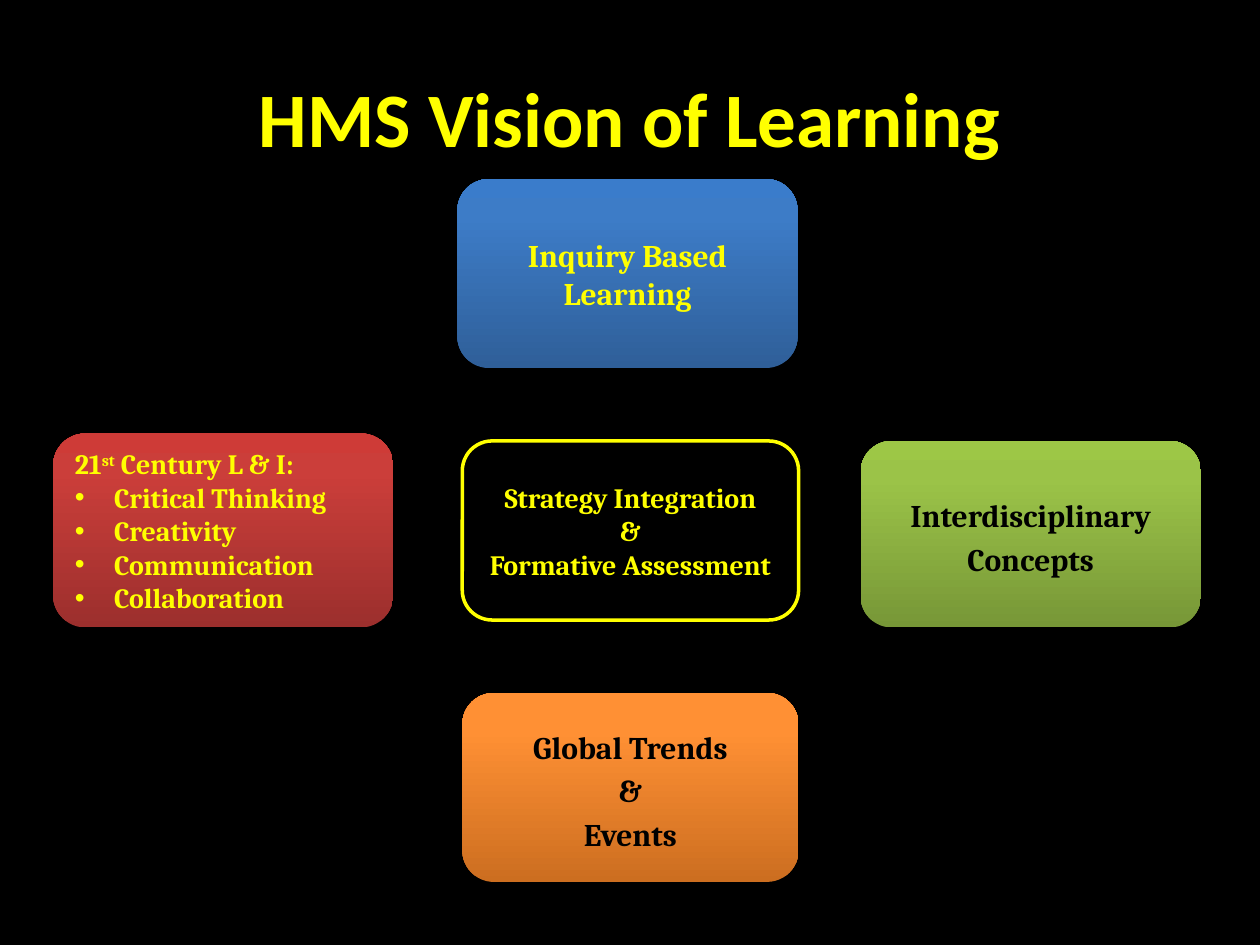
from copy import deepcopy

from lxml.etree import SubElement
from pptx import Presentation
from pptx.dml.color import RGBColor
from pptx.enum.shapes import MSO_SHAPE
from pptx.enum.text import MSO_ANCHOR, PP_ALIGN
from pptx.oxml.ns import qn
from pptx.util import Cm, Pt

# Content: a line is a list of (text, superscript) runs or a plain string
TITLE = "HMS Vision of Learning"
CARDS = [
    dict(at=(9.32, 8.89, 6.78, 3.61), fill="center", ink="yellow", size="small",
         lines=["Strategy Integration", "&", "Formative Assessment"]),
    dict(at=(9.22, 3.61, 6.86, 3.81), fill="blue", ink="yellow", size="large",
         lines=["Inquiry Based", "Learning"]),
    dict(at=(1.07, 8.74, 6.86, 3.91), fill="red", ink="yellow", size="small",
         align=PP_ALIGN.LEFT,
         lines=[[("21", False), ("st", True), (" Century L & I:", False)]],
         bullets=["Critical Thinking", "Creativity", "Communication", "Collaboration"]),
    dict(at=(17.35, 8.89, 6.86, 3.76), fill="green", ink="black", size="large",
         spacing=1.15, lines=["Interdisciplinary Concepts"]),
    dict(at=(9.32, 13.97, 6.78, 3.81), fill="orange", ink="black", size="large",
         spacing=1.15, lines=["Global Trends", "&", "Events"]),
]

THEME = dict(
    colors=dict(yellow="FFFF00", black="000000"),
    gradients=dict(blue=("2F5F99", "3D7CC7", "3A7CCB"),
                   red=("9C2F2D", "CB3E3A", "CE3B37"),
                   green=("779737", "9BC348", "9DC746"),
                   orange=("CC6E20", "FF9034", "FF9136")),
    stops=(0, 0.8, 1),
    sizes=dict(title=44, large=18, small=16),
    fonts=dict(title="Calibri", body="Cambria"),
)


def color(name):
    return RGBColor.from_string(THEME["colors"][name])


def style(paragraph, font_name, size, ink, align):
    paragraph.alignment = align
    font = paragraph.font
    font.name = THEME["fonts"][font_name]
    font.size = Pt(THEME["sizes"][size])
    font.bold = True
    font.color.rgb = color(ink)


def add_bullet(paragraph):
    properties = paragraph._p.get_or_add_pPr()
    properties.set("marL", str(Cm(0.79)))
    properties.set("indent", str(-Cm(0.79)))
    SubElement(properties, qn("a:buFont")).set("typeface", "Arial")
    SubElement(properties, qn("a:buChar")).set("char", "•")


def fill_gradient(shape, colors):
    shape.fill.gradient()
    shape.fill.gradient_angle = 90
    stop_list = shape.element.spPr.find(".//" + qn("a:gsLst"))
    stop_list.append(deepcopy(stop_list[-1]))
    for stop, position, value in zip(shape.fill.gradient_stops, THEME["stops"], colors):
        stop.position = position
        stop.color.rgb = RGBColor.from_string(value)


def add_card(slide, card):
    shape = slide.shapes.add_shape(MSO_SHAPE.ROUNDED_RECTANGLE, *map(Cm, card["at"]))
    shape.shadow.inherit = False
    if card["fill"] == "center":
        shape.fill.solid()
        shape.fill.fore_color.rgb = color("black")
        shape.line.color.rgb = color("yellow")
        shape.line.width = Pt(2)
    else:
        fill_gradient(shape, THEME["gradients"][card["fill"]])
        shape.line.fill.background()

    frame = shape.text_frame
    frame.word_wrap = True
    frame.vertical_anchor = MSO_ANCHOR.MIDDLE
    bullets = card.get("bullets", [])
    for index, line in enumerate(card["lines"] + bullets):
        paragraph = frame.add_paragraph() if index else frame.paragraphs[0]
        if line in bullets:
            add_bullet(paragraph)
        if "spacing" in card:
            paragraph.line_spacing = card["spacing"]
        style(paragraph, "body", card["size"], card["ink"],
              card.get("align", PP_ALIGN.CENTER))
        for text, superscript in [(line, False)] if isinstance(line, str) else line:
            run = paragraph.add_run()
            run.text = text
            if superscript:
                run._r.get_or_add_rPr().set("baseline", "30000")


def main():
    presentation = Presentation()
    presentation.slide_width, presentation.slide_height = Cm(25.4), Cm(19.05)
    slide = presentation.slides.add_slide(presentation.slide_layouts[6])
    slide.background.fill.solid()
    slide.background.fill.fore_color.rgb = color("black")

    # Title
    title = slide.shapes.add_textbox(Cm(1.27), Cm(0.76), Cm(22.86), Cm(3.18))
    frame = title.text_frame
    frame.word_wrap = True
    frame.vertical_anchor = MSO_ANCHOR.MIDDLE
    frame.text = TITLE
    style(frame.paragraphs[0], "title", "title", "yellow", PP_ALIGN.CENTER)

    # Center card and the four around it
    for card in CARDS:
        add_card(slide, card)

    presentation.save("out.pptx")


if __name__ == "__main__":
    main()
